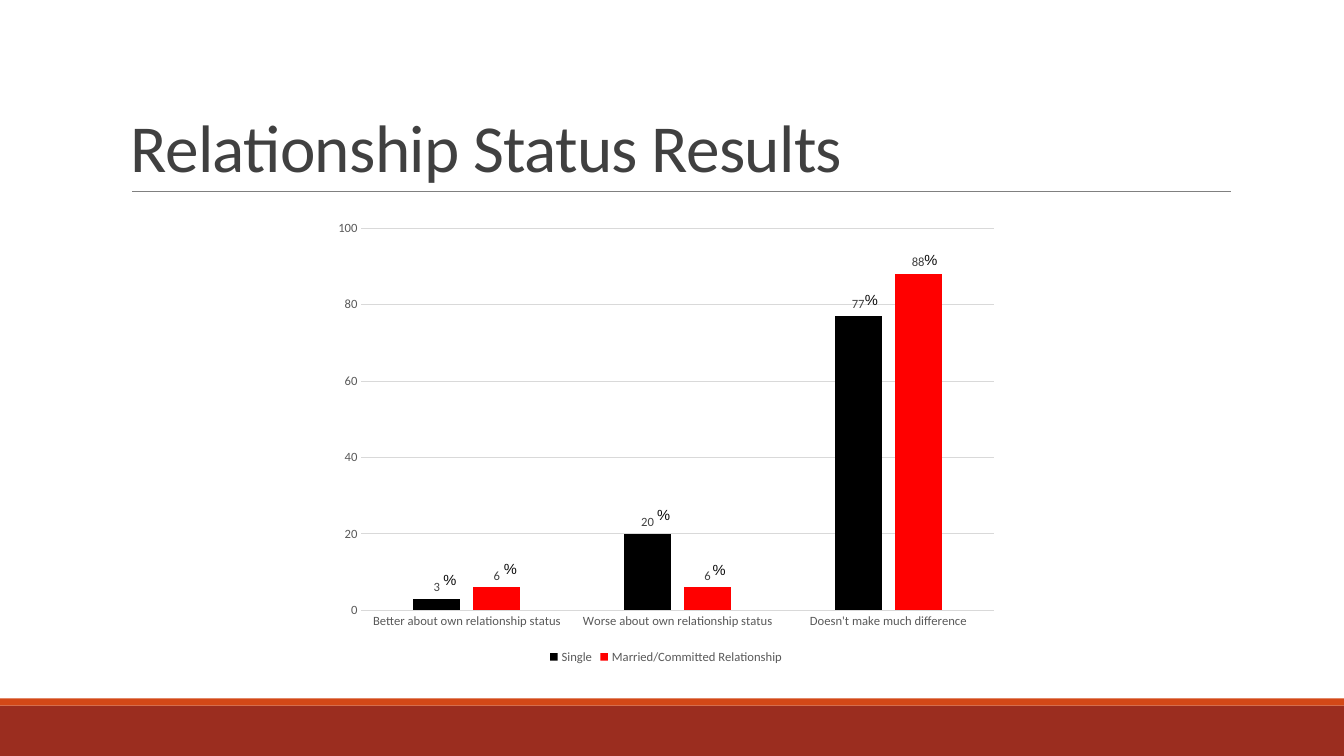
from lxml.etree import SubElement
from pptx import Presentation
from pptx.chart.data import CategoryChartData
from pptx.dml.color import RGBColor
from pptx.enum.chart import XL_CHART_TYPE, XL_LABEL_POSITION, XL_LEGEND_POSITION, XL_TICK_MARK
from pptx.enum.shapes import MSO_CONNECTOR, MSO_SHAPE
from pptx.enum.text import MSO_ANCHOR
from pptx.oxml.ns import qn
from pptx.util import Inches, Pt

COLORS = {
    "band": "9B2D1F", "stripe": "D34817", "rule": "808080", "title": "404040",
    "axis": "595959", "grid": "D9D9D9", "percent": "0C0C0C",
    "single": "000000", "married": "FF0000",
}
CATEGORIES = ["Better about own relationship status",
              "Worse about own relationship status",
              "Doesn't make much difference"]
SERIES = [("Single", [3, 20, 77], "single"),
          ("Married/Committed Relationship", [6, 6, 88], "married")]
PERCENT_SPOTS = [(4.9, 5.5), (4.3, 5.61), (6.42, 4.97),
                 (6.97, 5.51), (8.48, 2.84), (9.07, 2.44)]


class SlideBuilder:
    def __init__(self, page, font="Calibri"):
        self.page = page
        self.font = font

    def color(self, name):
        return RGBColor.from_string(COLORS[name])

    def style_font(self, font, size, color, name=None):
        font.name = name or self.font
        font.size = Pt(size)
        font.color.rgb = self.color(color)

    def style_line(self, line, color, width):
        line.color.rgb = self.color(color)
        line.width = Pt(width)

    def bar(self, left, top, width, height, color):
        shape = self.page.shapes.add_shape(
            MSO_SHAPE.RECTANGLE, Inches(left), Inches(top), Inches(width), Inches(height))
        shape.shadow.inherit = False
        shape.fill.solid()
        shape.fill.fore_color.rgb = self.color(color)
        shape.line.fill.background()

    def rule(self, left, right, top, color, width):
        line = self.page.shapes.add_connector(
            MSO_CONNECTOR.STRAIGHT, Inches(left), Inches(top), Inches(right), Inches(top))
        self.style_line(line.line, color, width)
        SubElement(line._element.spPr, qn("a:effectLst"))

    def text(self, left, top, width, height, words, size, color, font=None,
             anchor=MSO_ANCHOR.TOP, line_spacing=None, tracking=None):
        """Add a one-run text box; tracking is letter spacing in points."""
        box = self.page.shapes.add_textbox(
            Inches(left), Inches(top), Inches(width), Inches(height))
        frame = box.text_frame
        frame.word_wrap = True
        frame.vertical_anchor = anchor
        para = frame.paragraphs[0]
        para.line_spacing = line_spacing
        span = para.add_run()
        span.text = words
        self.style_font(span.font, size, color, font)
        if tracking is not None:
            span._r.get_or_add_rPr().set("spc", str(round(tracking * 100)))

    def column_chart(self, left, top, width, height, categories, series):
        data = CategoryChartData()
        data.categories = categories
        for name, values, _ in series:
            data.add_series(name, values)
        chart = self.page.shapes.add_chart(
            XL_CHART_TYPE.COLUMN_CLUSTERED, Inches(left), Inches(top),
            Inches(width), Inches(height), data).chart
        self.style_font(chart.font, 10, "single")
        chart.has_title = False
        chart.has_legend = True
        chart.legend.position = XL_LEGEND_POSITION.BOTTOM
        chart.legend.include_in_layout = False
        self.style_font(chart.legend.font, 9, "axis")

        for axis in (chart.category_axis, chart.value_axis):
            axis.major_tick_mark = axis.minor_tick_mark = XL_TICK_MARK.NONE
            self.style_font(axis.tick_labels.font, 9, "axis")
        self.style_line(chart.category_axis.format.line, "grid", 0.75)
        value_axis = chart.value_axis
        value_axis.minimum_scale, value_axis.maximum_scale = 0, 100
        value_axis.major_unit = 20
        value_axis.format.line.fill.background()
        self.style_line(value_axis.major_gridlines.format.line, "grid", 0.75)

        plot = chart.plots[0]
        plot.gap_width, plot.overlap = 219, -27
        plot.vary_by_categories = False
        for columns, (_, _, color) in zip(plot.series, series):
            columns.format.fill.solid()
            columns.format.fill.fore_color.rgb = self.color(color)
            labels = columns.data_labels
            labels.show_value = True
            labels.position = XL_LABEL_POSITION.OUTSIDE_END
            self.style_font(labels.font, 9, "title")


def main():
    deck = Presentation()
    deck.slide_width, deck.slide_height = Inches(13.33), Inches(7.5)
    builder = SlideBuilder(deck.slides.add_slide(deck.slide_layouts[6]))
    builder.bar(0, 7, 13.33, 0.5, "band")
    builder.bar(0, 6.93, 13.33, 0.07, "stripe")
    builder.rule(1.31, 12.21, 1.9, "rule", 0.5)
    builder.text(1.2, 0.31, 11, 1.59, "Relationship Status Results", 48, "title",
                 anchor=MSO_ANCHOR.BOTTOM, line_spacing=0.85, tracking=-0.5)
    builder.column_chart(3.22, 2.1, 6.77, 4.53, CATEGORIES, SERIES)
    for left, top in PERCENT_SPOTS:
        builder.text(left, top, 0.81, 0.28, "%", 10.5, "percent", font="Arial")
    deck.save("out.pptx")


if __name__ == "__main__":
    main()
